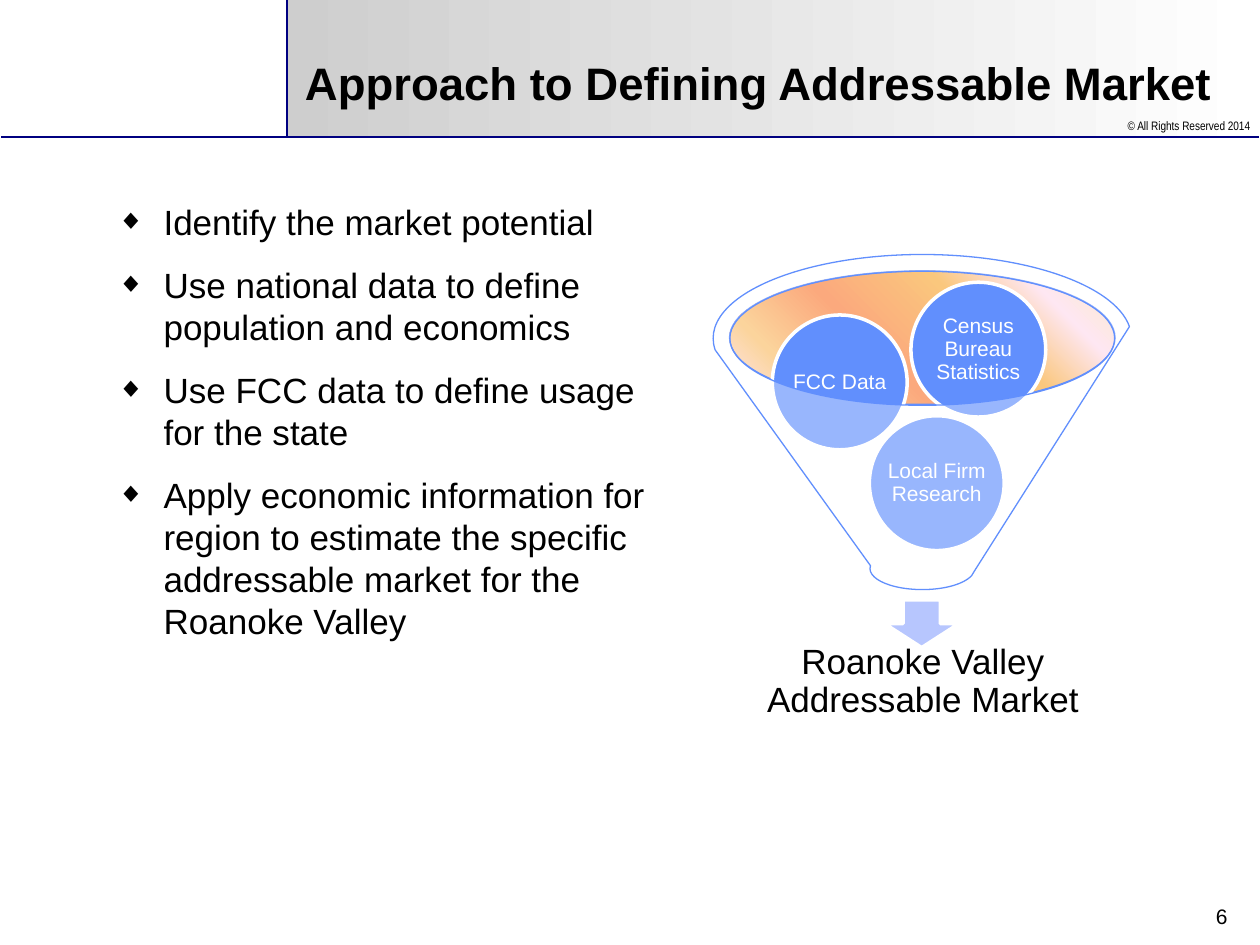
import pptx
import pptx.util
import pptx.dml.color
import pptx.enum.shapes
import pptx.enum.text
import pptx.oxml.ns
from lxml import etree

Inches = pptx.util.Inches
Pt = pptx.util.Pt
RGB = pptx.dml.color.RGBColor.from_string
SHAPE = pptx.enum.shapes.MSO_SHAPE
ALIGN = pptx.enum.text.PP_ALIGN
ANCHOR = pptx.enum.text.MSO_ANCHOR
qn = pptx.oxml.ns.qn

COLORS = {"text": "000000", "white": "FFFFFF", "rule": "000080",
          "blue": "618FFD", "arrow": "B7C6FE"}
BANNER_STOPS = [(0, "CECECE"), (100, "FFFFFF")]
MOUTH_STOPS = [(0, "FBEAC7"), (18, "FEE7F2"), (36, "FAC77D"),
               (61, "FBA97D"), (82, "FBD49C"), (100, "FEE7F2")]

prs = pptx.Presentation()
prs.slide_width, prs.slide_height = Inches(10), Inches(7.5)
s = prs.slides.add_slide(prs.slide_layouts[5])


def add_shape(kind, box, fill, line=None, width=2, angle=0):
    sp = s.shapes.add_shape(kind, *map(Inches, box))
    sp.shadow.inherit = False
    if isinstance(fill, list):
        sp.fill.gradient()
        sp.fill.gradient_angle = -angle % 360
        gs_list = sp._element.spPr.find(qn("a:gradFill")).find(qn("a:gsLst"))
        for gs in list(gs_list):
            gs_list.remove(gs)
        for pos, color in fill:
            gs = etree.SubElement(gs_list, qn("a:gs"), pos=str(pos * 1000))
            etree.SubElement(gs, qn("a:srgbClr"), val=color)
    else:
        sp.fill.solid()
        sp.fill.fore_color.rgb = RGB(COLORS[fill])
    if line:
        sp.line.color.rgb = RGB(COLORS[line])
        sp.line.width = Pt(width)
    else:
        sp.line.fill.background()
    return sp


def add_text(box, lines, size, color="text", name="Arial", bold=False, sp=None,
             align=ALIGN.LEFT, anchor=ANCHOR.TOP, inset=None, spacing=None):
    sp = sp or s.shapes.add_textbox(0, 0, 0, 0)
    sp.left, sp.top, sp.width, sp.height = map(Inches, box)
    tf = sp.text_frame
    tf.word_wrap = True
    tf.auto_size = pptx.enum.text.MSO_AUTO_SIZE.NONE
    tf.vertical_anchor = anchor
    if inset is not None:
        for side in ("left", "top", "right", "bottom"):
            setattr(tf, "margin_" + side, Inches(inset))
    for i, line in enumerate(lines):
        p = tf.add_paragraph() if i else tf.paragraphs[0]
        p.alignment = align
        p.line_spacing = spacing
        r = p.add_run()
        r.text = line
        r.font.color.rgb = RGB(COLORS[color])
        for key, value in {"size": Pt(size), "name": name, "bold": bold}.items():
            setattr(r.font, key, value)
    return tf


banner = add_shape(SHAPE.RECTANGLE, (2.28, 0, 7.7, 1.09), BANNER_STOPS)
s.shapes._spTree.insert(2, banner._element)
for ends in [(0.01, 1.09, 9.99, 1.09), (2.28, -0.01, 2.28, 1.09)]:
    rule = s.shapes.add_connector(pptx.enum.shapes.MSO_CONNECTOR.STRAIGHT,
                                  *map(Inches, ends))
    rule.line.color.rgb = RGB(COLORS["rule"])
    rule.line.width = Pt(1)
    etree.SubElement(rule._element.spPr, qn("a:effectLst"))

add_text((8.56, 0.89, 1.46, 0.33), ["© All Rights Reserved 2014"], 7,
         name="Arial Narrow", align=ALIGN.RIGHT)
add_text((2.32, 0.22, 7.6, 0.86), ["Approach to Defining Addressable Market"], 26,
         bold=True, sp=s.shapes.title, anchor=ANCHOR.MIDDLE)

steps = ["Identify the market potential",
         "Use national data to define population and economics",
         "Use FCC data to define usage for the state",
         "Apply economic information for region to estimate the specific "
         "addressable market for the Roanoke Valley"]
tf = add_text((0.83, 1.54, 4.57, 5.44), steps, 20)
for i, p in enumerate(tf.paragraphs):
    p.space_before = Pt(6 if i else 0)
    p.space_after = Pt(6)
    pPr = p._p.get_or_add_pPr()
    pPr.set("marL", str(Inches(0.37)))
    pPr.set("indent", str(-Inches(0.37)))
    etree.SubElement(pPr, qn("a:buSzPct"), val="80000")
    etree.SubElement(pPr, qn("a:buFont"), typeface="Arial")
    etree.SubElement(pPr, qn("a:buChar"), char="◆")

add_text((7.76, 7.12, 2.08, 0.31), ["6"], 12, align=ALIGN.RIGHT)

add_shape(SHAPE.OVAL, (5.79, 2.15, 3.06, 1.06), MOUTH_STOPS, "blue", 0.75, angle=135)
add_shape(SHAPE.DOWN_ARROW, (7.02, 4.76, 0.59, 0.38), "arrow", "white")
add_text((5.9, 5.06, 2.85, 0.71), ["Roanoke Valley Addressable Market"], 20,
         align=ALIGN.CENTER, anchor=ANCHOR.MIDDLE, inset=0.16, spacing=0.9)

for label, left, top in [("Local Firm Research", 6.9, 3.3),
                         ("FCC Data", 6.13, 2.5),
                         ("Census Bureau Statistics", 7.23, 2.24)]:
    box = (left, top, 1.07, 1.07)
    add_shape(SHAPE.OVAL, box, "blue", "white")
    add_text(box, [label], 12, "white", align=ALIGN.CENTER,
             anchor=ANCHOR.MIDDLE, inset=0.02, spacing=0.9)

funnel = add_shape(SHAPE.FUNNEL, (5.66, 2.02, 3.32, 2.66), "white", "blue", 0.75)
fill_color = funnel._element.spPr.find(qn("a:solidFill")).find(qn("a:srgbClr"))
etree.SubElement(fill_color, qn("a:alpha"), val="35000")

prs.save("out.pptx")
